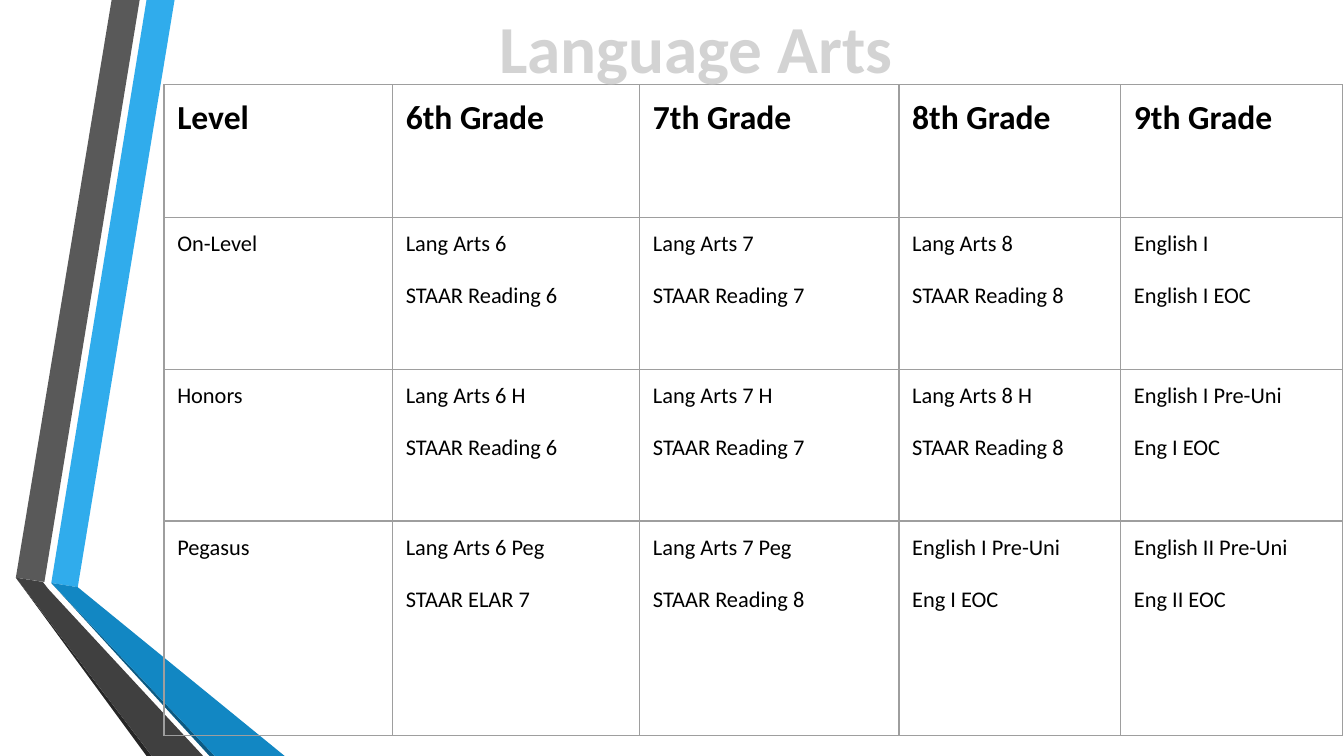
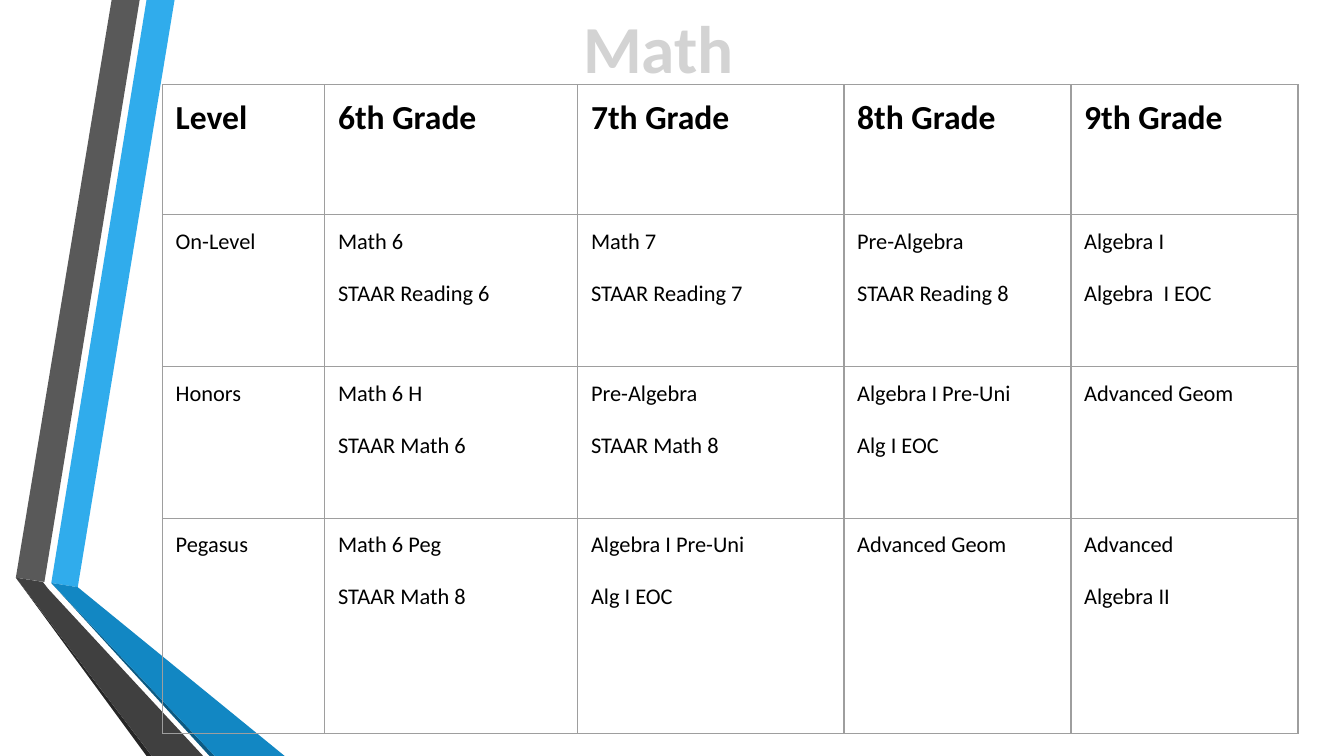
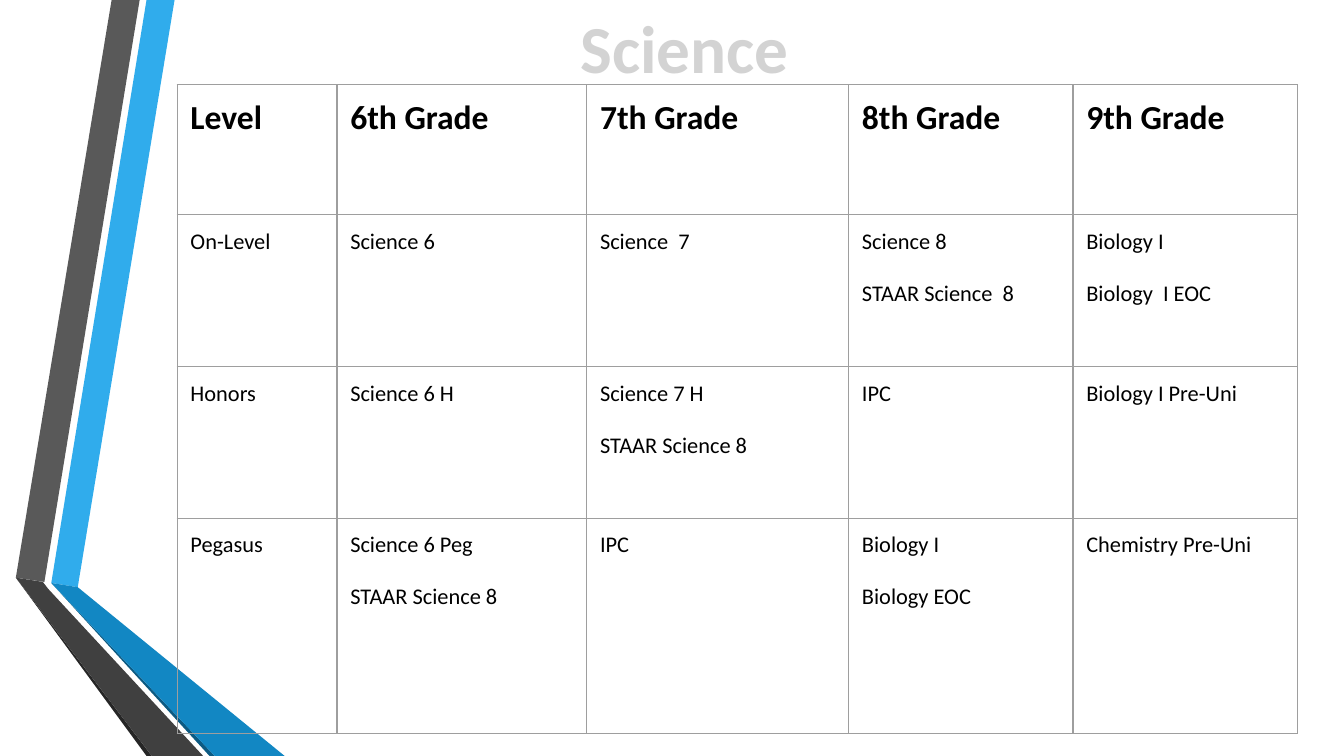
from lxml import etree
from pptx import Presentation
from pptx import util as u
from pptx.dml.color import RGBColor
from pptx.enum import dml, text
from pptx.oxml import parse_xml
from pptx.oxml.ns import nsdecls, qn

# Shared look
COLORS = {
    "sky": "30ACEC", "blue": "1287C3", "navy": "0C5A82",
    "gray": "595959", "charcoal": "404040", "black": "262626",
    "grid": "9E9E9E", "ink": "000000",
    "title_stripe": "212121", "title_base": "D3D3D3", "title_edge": "191919",
}
HEADER_FONT = {"name": "Calibri", "size": u.Pt(18), "bold": True}
BODY_FONT = {"name": "Calibri", "size": u.Pt(12), "bold": False}
TITLE_FONT = {"name": "Calibri", "size": u.Pt(36), "bold": True}
CELL_MARGINS = {f"margin_{side}": u.Cm(0.25) for side in ("left", "top", "right", "bottom")}
TABLE_FLAGS = {"first_row": False, "horz_banding": False}
COURSE_GAP = u.Pt(13.2)

# Folded ribbon at the left edge: colour and corners in cm, back to front
RIBBON = [
    ("sky", [(0.97, 11.02), (1.47, 11.1), (3.3, 0), (2.77, 0)]),
    ("gray", [(2.64, 0), (2.11, 0), (0.3, 10.92), (0.84, 11)]),
    ("black", [(0.3, 10.92), (2.77, 14.29), (2.87, 14.29)]),
    ("navy", [(0.97, 11.02), (3.96, 14.29), (4.06, 14.29)]),
    ("blue", [(0.97, 11.02), (4.06, 14.29), (5.38, 14.29), (1.47, 11.1)]),
    ("charcoal", [(3.84, 14.29), (0.91, 11.13), (0.81, 11), (0.3, 10.92), (2.87, 14.29)]),
]

# Courses by level; "|" parts the course from its exam
GRADES = ["Level", "6th Grade", "7th Grade", "8th Grade", "9th Grade"]
SUBJECTS = [
    {"title": "Language Arts", "title_left": 5.33, "left": 3.1,
     "widths": [4.32, 4.67, 4.9, 4.19, 4.19], "header_height": 2.51,
     "levels": [
         ["On-Level", "Lang Arts 6|STAAR Reading 6", "Lang Arts 7|STAAR Reading 7",
          "Lang Arts 8|STAAR Reading 8", "English I|English I EOC"],
         ["Honors", "Lang Arts 6 H|STAAR Reading 6", "Lang Arts 7 H|STAAR Reading 7",
          "Lang Arts 8 H|STAAR Reading 8", "English I Pre-Uni|Eng I EOC"],
         ["Pegasus", "Lang Arts 6 Peg|STAAR ELAR 7", "Lang Arts 7 Peg|STAAR Reading 8",
          "English I Pre-Uni|Eng I EOC", "English II Pre-Uni|Eng II EOC"],
     ]},
    {"title": "Math", "title_left": 4.62, "left": 3.07,
     "widths": [3.07, 4.78, 5.03, 4.29, 4.29], "header_height": 2.46,
     "levels": [
         ["On-Level", "Math 6|STAAR Reading 6", "Math 7|STAAR Reading 7",
          "Pre-Algebra|STAAR Reading 8", "Algebra I|Algebra  I EOC"],
         ["Honors", "Math 6 H|STAAR Math 6", "Pre-Algebra|STAAR Math 8",
          "Algebra I Pre-Uni|Alg I EOC", "Advanced Geom"],
         ["Pegasus", "Math 6 Peg|STAAR Math 8", "Algebra I Pre-Uni|Alg I EOC",
          "Advanced Geom", "Advanced|Algebra II"],
     ]},
    {"title": "Science", "title_left": 5.11, "left": 3.35,
     "widths": [3.02, 4.72, 4.95, 4.24, 4.24], "header_height": 2.46,
     "levels": [
         ["On-Level", "Science 6", "Science  7",
          "Science 8|STAAR Science  8", "Biology I|Biology  I EOC"],
         ["Honors", "Science 6 H", "Science 7 H|STAAR Science 8",
          "IPC", "Biology I Pre-Uni"],
         ["Pegasus", "Science 6 Peg|STAAR Science 8", "IPC",
          "Biology I|Biology EOC", "Chemistry Pre-Uni"],
     ]},
]


def apply(target, values):
    for name, value in values.items():
        setattr(target, name, value)


def line_xml(tag, color, points):
    return parse_xml(
        f'<a:{tag} {nsdecls("a")} w="{u.Pt(points)}"><a:solidFill>'
        f'<a:srgbClr val="{COLORS[color]}"/></a:solidFill></a:{tag}>')


prs = Presentation()
apply(prs, {"slide_width": u.Cm(25.4), "slide_height": u.Cm(14.29)})

for subject in SUBJECTS:
    slide = prs.slides.add_slide(prs.slide_layouts[6])

    # Ribbon
    for color, corners in RIBBON:
        points = [(u.Cm(x), u.Cm(y)) for x, y in corners]
        outline = slide.shapes.build_freeform(*points[0])
        outline.add_line_segments(points[1:], close=True)
        fold = outline.convert_to_shape()
        fold.shadow.inherit = False
        fold.fill.solid()
        fold.fill.fore_color.rgb = RGBColor.from_string(COLORS[color])
        fold.line.fill.background()

    # Course table
    rows = [GRADES] + subject["levels"]
    heights = [subject["header_height"], 2.87, 2.87, 4.06]
    courses = slide.shapes.add_table(
        len(rows), len(GRADES), u.Cm(subject["left"]), u.Cm(1.6),
        u.Cm(sum(subject["widths"])), u.Cm(sum(heights))).table
    apply(courses, TABLE_FLAGS)
    for column, width in zip(courses.columns, subject["widths"]):
        column.width = u.Cm(width)
    for r, (entries, height) in enumerate(zip(rows, heights)):
        courses.rows[r].height = u.Cm(height)
        for c, entry in enumerate(entries):
            cell = courses.cell(r, c)
            apply(cell, CELL_MARGINS)
            cell.fill.background()
            borders = cell._tc.get_or_add_tcPr()
            for i, tag in enumerate(("lnL", "lnR", "lnT", "lnB")):
                borders.insert(i, line_xml(tag, "grid", 0.75))
            cell.text = entry.replace("|", "\n")
            for n, course in enumerate(cell.text_frame.paragraphs):
                if n:
                    course.space_before = COURSE_GAP
                font = course.runs[0].font
                apply(font, BODY_FONT if r else HEADER_FONT)
                font.color.rgb = RGBColor.from_string(COLORS["ink"])

    # Title with a striped fill and a thin edge
    title = slide.shapes.add_textbox(
        u.Cm(subject["title_left"]), 0, u.Cm(15.65), u.Cm(1.8)).text_frame
    apply(title, {"word_wrap": True, "auto_size": text.MSO_AUTO_SIZE.SHAPE_TO_FIT_TEXT})
    heading = title.paragraphs[0]
    heading.alignment = text.PP_ALIGN.CENTER
    words = heading.add_run()
    words.text = subject["title"]
    apply(words.font, TITLE_FONT)
    stripes = words.font.fill
    stripes.patterned()
    stripes.pattern = dml.MSO_PATTERN.DARK_UPWARD_DIAGONAL
    stripes.fore_color.rgb = RGBColor.from_string(COLORS["title_stripe"])
    stripes.back_color.rgb = RGBColor.from_string(COLORS["title_base"])
    words._r.find(qn("a:rPr")).insert(0, line_xml("ln", "title_edge", 1))

prs.save("out.pptx")
